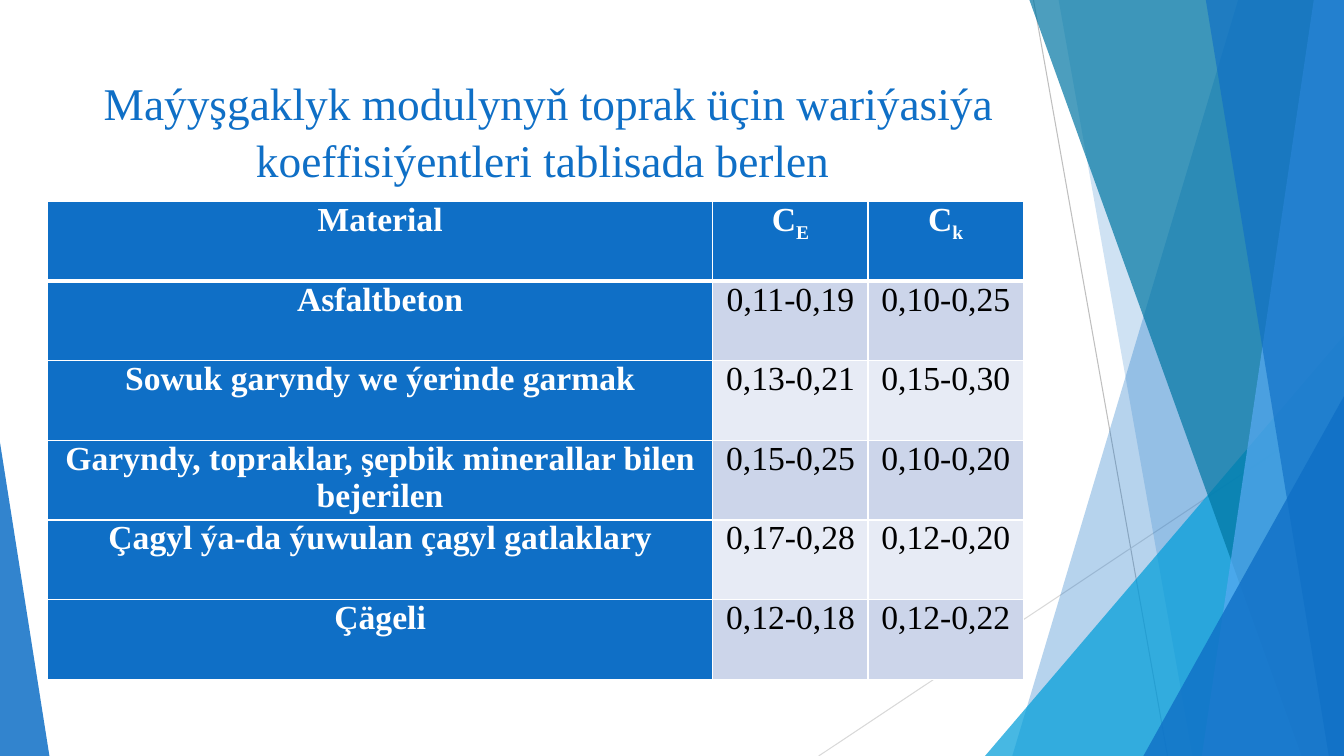
from lxml.etree import SubElement
from pptx import Presentation
from pptx.dml.color import RGBColor
from pptx.enum.shapes import MSO_CONNECTOR, MSO_SHAPE
from pptx.enum.text import MSO_ANCHOR, MSO_AUTO_SIZE, PP_ALIGN
from pptx.oxml.ns import qn
from pptx.util import Inches, Pt

COLORS = {
    "blue": "0F6FC6", "cyan": "009DD9", "teal": "0076A3", "sky": "59AAF2",
    "band": "CCD5EA", "pale": "E7EBF5", "white": "FFFFFF", "black": "000000",
    "gray": "BFBFBF", "silver": "D9D9D9",
}
FONT = "Times New Roman"
WIDTH, HEIGHT = 13.33, 7.5


class SlideMaker:
    def __init__(self, page):
        self.page = page
        self.shapes = page.shapes

    def color(self, name):
        return RGBColor.from_string(COLORS[name])

    def style_text(self, para, size, color, bold=False):
        para.alignment = PP_ALIGN.CENTER
        para.font.name = FONT
        para.font.size = Pt(size)
        para.font.bold = bold
        para.font.color.rgb = self.color(color)

    def title(self, text, left, top, width, height):
        box = self.shapes.title
        box.left, box.top = Inches(left), Inches(top)
        box.width, box.height = Inches(width), Inches(height)
        frame = box.text_frame
        frame.text = text
        frame.word_wrap = True
        frame.auto_size = MSO_AUTO_SIZE.NONE
        frame.vertical_anchor = MSO_ANCHOR.MIDDLE
        frame.paragraphs[0].line_spacing = 1.05
        self.style_text(frame.paragraphs[0], 32.4, "blue")

    def line(self, start, end, color):
        line = self.shapes.add_connector(
            MSO_CONNECTOR.STRAIGHT, *(Inches(value) for value in start + end))
        line.line.color.rgb = self.color(color)
        line.line.width = Pt(0.75)
        SubElement(line.element.spPr, qn("a:effectLst"))

    def paint(self, shape, color, opacity):
        shape.shadow.inherit = False
        shape.line.fill.background()
        shape.fill.solid()
        shape.fill.fore_color.rgb = self.color(color)
        tint = shape.element.spPr.find(qn("a:solidFill"))[0]
        SubElement(tint, qn("a:alpha"), val=str(opacity * 1000))

    def facet(self, top_left, bottom_left, color, opacity):
        """Full-height panel with a slanted left side, ending at the right edge."""
        builder = self.shapes.build_freeform(Inches(top_left), 0, scale=1.0)
        corners = [(WIDTH, 0), (WIDTH, HEIGHT), (bottom_left, HEIGHT)]
        builder.add_line_segments([(Inches(x), Inches(y)) for x, y in corners])
        self.paint(builder.convert_to_shape(), color, opacity)

    def triangle(self, left, width, height, apex, color, opacity):
        """Triangle standing on the bottom edge of the slide."""
        shape = self.shapes.add_shape(
            MSO_SHAPE.ISOSCELES_TRIANGLE, Inches(left), Inches(HEIGHT - height),
            Inches(width), Inches(height))
        shape.adjustments[0] = apex
        self.paint(shape, color, opacity)

    def borders(self, cell, top, bottom):
        properties = cell._tc.get_or_add_tcPr()
        for side, points in (("L", 1), ("R", 1), ("T", top), ("B", bottom)):
            edge = SubElement(properties, qn("a:ln" + side), w=str(Pt(points)))
            fill = SubElement(edge, qn("a:solidFill"))
            SubElement(fill, qn("a:srgbClr"), val=COLORS["white"])

    def cell(self, cell, text, fill, color, bold):
        cell.margin_left = cell.margin_right = Inches(0.07)
        cell.margin_top = cell.margin_bottom = 0
        cell.fill.solid()
        cell.fill.fore_color.rgb = self.color(fill)
        para = cell.text_frame.paragraphs[0]
        self.style_text(para, 24, color, bold)
        # An underscore marks the start of a subscript
        base, _, subscript = text.partition("_")
        para.add_run().text = base
        if subscript:
            span = para.add_run()
            span.text = subscript
            span.font._element.set("baseline", "-25000")

    def table(self, rows, left, top, widths, row_height):
        table = self.shapes.add_table(
            len(rows), len(widths), Inches(left), Inches(top),
            Inches(sum(widths)), Inches(row_height * len(rows))).table
        table.first_col = True
        for column, width in zip(table.columns, widths):
            column.width = Inches(width)
        for r, row in enumerate(rows):
            table.rows[r].height = Inches(row_height)
            for c, text in enumerate(row):
                cell = table.cell(r, c)
                self.borders(cell, 3 if r == 1 else 1, 3 if r == 0 else 1)
                if r == 0 or c == 0:
                    self.cell(cell, text, "blue", "white", True)
                else:
                    self.cell(cell, text, "band" if r % 2 else "pale", "black", False)


def main():
    deck = Presentation()
    deck.slide_width, deck.slide_height = Inches(WIDTH), Inches(HEIGHT)
    maker = SlideMaker(deck.slides.add_slide(deck.slide_layouts[5]))

    # Background decoration, back to front
    maker.line((10.25, 0), (11.58, HEIGHT), "gray")
    maker.line((WIDTH, 4.03), (8.12, HEIGHT), "silver")
    maker.facet(12.28, 10.04, "blue", 30)
    maker.facet(10.5, 11.83, "blue", 20)
    maker.triangle(9.77, 3.56, 4.17, 1, "cyan", 72)
    maker.facet(10.21, 12.91, "teal", 70)
    maker.facet(13.03, 11.92, "sky", 70)
    maker.facet(11.96, 13.18, "blue", 65)
    maker.triangle(11.34, 1.99, 3.57, 1, "blue", 80)
    maker.triangle(0, 0.49, 3.11, 0, "blue", 85)

    # Title
    maker.title("Maýyşgaklyk modulynyň toprak üçin wariýasiýa "
                "koeffisiýentleri tablisada berlen ", 0.74, 0.67, 9.4, 1.23)

    # Table of variation coefficients
    maker.table([
        ("Material", "C_E", "C_k"),
        ("Asfaltbeton", "0,11-0,19", "0,10-0,25"),
        ("Sowuk garyndy we ýerinde garmak", "0,13-0,21", "0,15-0,30"),
        ("Garyndy, topraklar, şepbik minerallar bilen bejerilen",
         "0,15-0,25", "0,10-0,20"),
        ("Çagyl ýa-da ýuwulan çagyl gatlaklary", "0,17-0,28", "0,12-0,20"),
        ("Çägeli", "0,12-0,18", "0,12-0,22"),
    ], 0.47, 2, (6.6, 1.54, 1.54), 0.79)

    deck.save("out.pptx")


if __name__ == "__main__":
    main()
